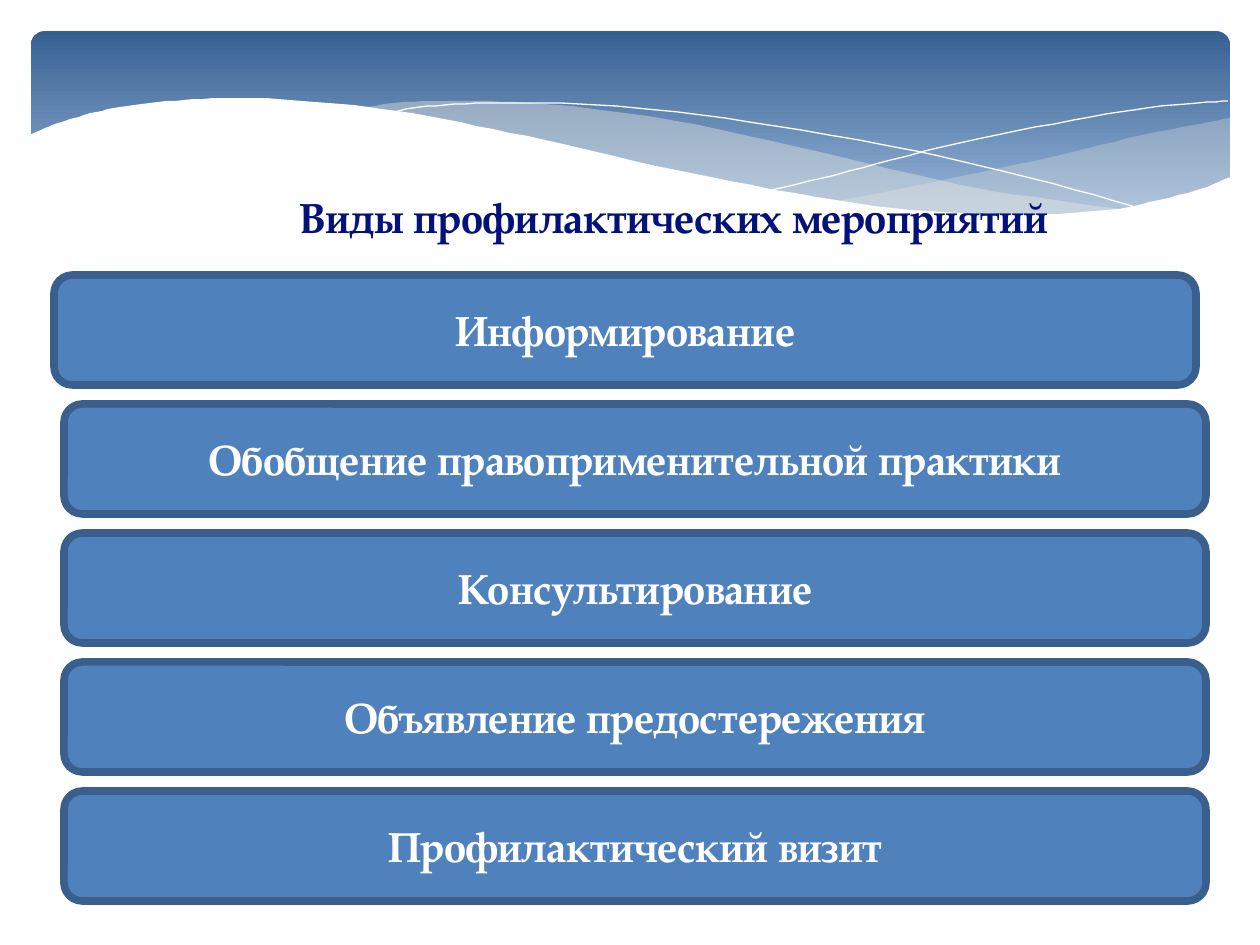
from lxml.etree import SubElement
from pptx import Presentation
from pptx.dml.color import RGBColor
from pptx.enum.shapes import MSO_SHAPE
from pptx.enum.text import MSO_ANCHOR, MSO_AUTO_SIZE, PP_ALIGN
from pptx.oxml.ns import qn
from pptx.util import Emu, Pt

PX = 914400 / 126
FONT = "TeX Gyre Pagella"
SAND, WHITE, NAVY = "EEECE1", "FFFFFF", "03117B"

RIGHT_WAVE_TOP = [
    (1230, 118), (1194, 125), (1142, 135), (1085, 149), (1014, 165), (919, 185), (833, 202)]
RIGHT_WAVE_BOTTOM = [
    (833, 202), (888, 208), (954, 214), (1012, 217), (1063, 215), (1110, 210),
    (1160, 202), (1196, 192), (1230, 178)]
MIDDLE_WAVE_TOP = [
    (1125, 210), (1055, 200), (977, 188), (890, 169), (793, 146), (717, 129), (648, 116),
    (586, 108), (529, 103), (479, 101), (433, 101), (394, 103), (360, 108)]
MIDDLE_WAVE_BOTTOM = [
    (360, 108), (407, 113), (456, 122), (509, 134), (566, 146), (668, 170), (757, 189),
    (838, 203), (910, 212), (974, 217), (1031, 218), (1080, 215), (1125, 210)]
FALLING_LINE = [
    (389, 113), (413, 108), (445, 105), (488, 103), (545, 103), (616, 106), (701, 115),
    (801, 130), (916, 151), (1002, 171), (1095, 195), (1143, 209)]
RISING_LINE = [
    (772, 190), (823, 178), (876, 164), (942, 147), (1016, 131), (1091, 117),
    (1147, 108), (1198, 103), (1228, 101)]
PAGE_EDGE = [
    (1231, 177), (1197, 190), (1159, 200), (1118, 209), (1071, 213), (1019, 215),
    (959, 213), (892, 208), (816, 197), (730, 181), (634, 161), (563, 144), (493, 129),
    (428, 116), (368, 107), (315, 102), (266, 98), (223, 98), (184, 100), (150, 103),
    (120, 107), (96, 112), (74, 118), (58, 123), (45, 128), (29, 135)]
PAGE_CORNERS = [(29, 282), (1231, 282)]

MEASURES = [
    "Информирование",
    "Обобщение правоприменительной практики",
    "Консультирование",
    "Объявление предостережения",
    "Профилактический визит",
]


def px(value):
    return Emu(round(value * PX))


def rgb(color):
    return RGBColor.from_string(color)


def smooth(points, steps=4):
    """Return a Catmull-Rom curve through the points."""
    padded = [points[0], *points, points[-1]]
    curve = []
    for a, b, c, d in zip(padded, padded[1:], padded[2:], padded[3:]):
        for step in range(steps):
            t = step / steps
            curve.append(tuple(
                (2 * q + (r - p) * t + (2 * p - 5 * q + 4 * r - s) * t ** 2
                 + (3 * q - p - 3 * r + s) * t ** 3) / 2
                for p, q, r, s in zip(a, b, c, d)))
    return curve + [points[-1]]


def write_text(shape, text, *, size=24, color=WHITE, bold=True, anchor=MSO_ANCHOR.MIDDLE):
    frame = shape.text_frame
    frame.word_wrap = True
    frame.vertical_anchor = anchor
    paragraph = frame.paragraphs[0]
    paragraph.alignment = PP_ALIGN.CENTER
    run = paragraph.add_run()
    run.text = text
    run.font.name = FONT
    run.font.size = Pt(size)
    run.font.bold = bold
    run.font.color.rgb = rgb(color)


def add_outline(slide, points, *, fill=None, opacity=100, line=None):
    """Draw a closed area when fill is given, otherwise an open line."""
    builder = slide.shapes.build_freeform(*points[0], scale=PX)
    builder.add_line_segments(points[1:], close=fill is not None)
    shape = builder.convert_to_shape()
    shape.shadow.inherit = False
    if fill:
        shape.fill.solid()
        shape.fill.fore_color.rgb = rgb(fill)
        if opacity < 100:
            color = shape.fill._xPr.find(".//" + qn("a:srgbClr"))
            SubElement(color, qn("a:alpha"), val=str(opacity * 1000))
    else:
        shape.fill.background()
    if line:
        shape.line.color.rgb = rgb(line)
        shape.line.width = Pt(0)
    else:
        shape.line.fill.background()


def add_rounded(slide, left, top, width, height):
    shape = slide.shapes.add_shape(
        MSO_SHAPE.ROUNDED_RECTANGLE, px(left), px(top), px(width), px(height))
    shape.shadow.inherit = False
    return shape


def add_banner(slide):
    banner = add_rounded(slide, 31, 31, 1199, 197)
    banner.adjustments[0] = 0.07
    banner.line.fill.background()
    banner.fill.gradient()
    banner.fill.gradient_angle = 270
    stops = banner.fill.gradient_stops
    for stop, position, color in zip(stops, (0, 0.9), ("376092", "95B3D7")):
        stop.position = position
        stop.color.rgb = rgb(color)

    add_outline(slide, smooth(RIGHT_WAVE_TOP) + smooth(RIGHT_WAVE_BOTTOM),
                fill=SAND, opacity=29)
    add_outline(slide, smooth(MIDDLE_WAVE_TOP) + smooth(MIDDLE_WAVE_BOTTOM),
                fill=SAND, opacity=40)
    for points in (FALLING_LINE, RISING_LINE):
        add_outline(slide, smooth(points), line=WHITE)
    add_outline(slide, smooth(PAGE_EDGE) + PAGE_CORNERS, fill=WHITE)


def add_measure(slide, text, left, top):
    bar = add_rounded(slide, left, top, 1142, 110)
    bar.fill.solid()
    bar.fill.fore_color.rgb = rgb("4F81BD")
    bar.line.color.rgb = rgb("3A5F8C")
    bar.line.width = Pt(4.33)
    write_text(bar, text)


def set_title(slide, text):
    """Fill the title placeholder and bring it in front of the banner."""
    title = slide.shapes.title
    title.left, title.top, title.width, title.height = map(px, (213, 185, 922, 63))
    write_text(title, text, color=NAVY, anchor=MSO_ANCHOR.TOP)
    title.text_frame.auto_size = MSO_AUTO_SIZE.SHAPE_TO_FIT_TEXT
    title.element.getparent().append(title.element)


def main():
    presentation = Presentation()
    presentation.slide_width, presentation.slide_height = px(1260), px(945)
    slide = presentation.slides.add_slide(presentation.slide_layouts[5])
    add_banner(slide)
    for index, text in enumerate(MEASURES):
        add_measure(slide, text, left=64 if index else 54, top=275 + 129 * index)
    set_title(slide, "Виды профилактических мероприятий")
    presentation.save("out.pptx")


if __name__ == "__main__":
    main()
